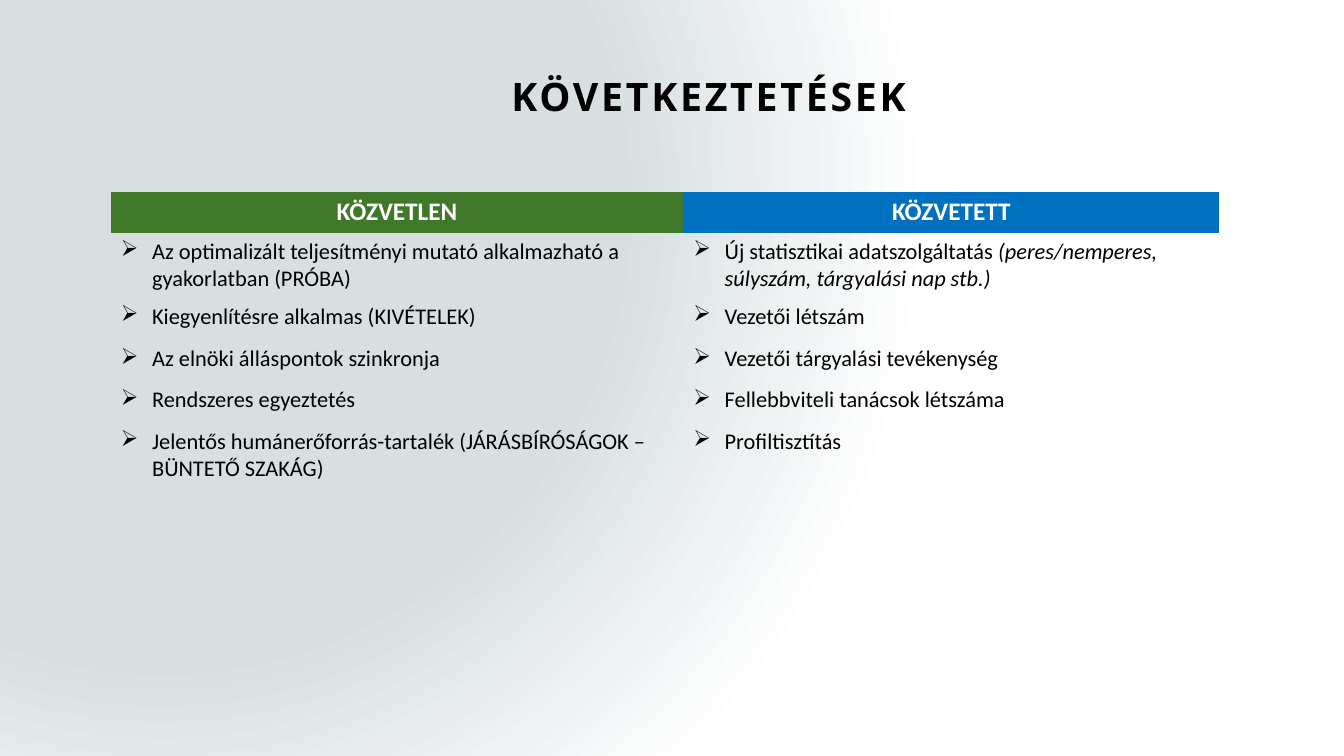
from dataclasses import dataclass

from lxml.etree import SubElement
from pptx import Presentation
from pptx.dml.color import RGBColor as Rgb
from pptx.enum.text import MSO_ANCHOR as Anchor, MSO_AUTO_SIZE as Fit, PP_ALIGN as Align
from pptx.oxml.ns import qn
from pptx.util import Cm, Pt

PLAIN = "{2D5ABB26-0587-4C30-8999-92F81FD0307C}"
INDENT = Cm(0.79)


@dataclass
class Column:
    head: str
    fill: str
    width: float
    items: list[str]
    tail: str = ""  # italic end of the first item


COLUMNS = [
    Column("KÖZVETLEN", "40782A", 14.43, [
        "Az optimalizált teljesítményi mutató alkalmazható a gyakorlatban (PRÓBA)",
        "Kiegyenlítésre alkalmas (KIVÉTELEK)",
        "Az elnöki álláspontok szinkronja",
        "Rendszeres egyeztetés",
        "Jelentős humánerőforrás-tartalék (JÁRÁSBÍRÓSÁGOK – BÜNTETŐ SZAKÁG)",
    ]),
    Column("KÖZVETETT", "0070C0", 13.51, [
        "Új statisztikai adatszolgáltatás ",
        "Vezetői létszám",
        "Vezetői tárgyalási tevékenység",
        "Fellebbviteli tanácsok létszáma",
        "Profiltisztítás",
    ], "(peres/nemperes, súlyszám, tárgyalási nap stb.)"),
]
ROWS = [1.04, 1.04, 1.07, 1.04, 1.04, 1.04]


def paint(part, color: str) -> None:
    part.rgb = Rgb.from_string(color)


def write(para, text: str, *, size: float = 16, font: str = "Calibri",
          color: str = "000000", bold: bool = False, italic: bool = False,
          space: float = 0) -> None:
    run = para.add_run()
    run.text = text
    face = run.font
    face.size, face.name, face.bold, face.italic = Pt(size), font, bold, italic
    paint(face.color, color)
    if space:
        run._r.get_or_add_rPr().set("spc", str(int(space * 100)))


def bullet(para) -> None:
    props = para._p.get_or_add_pPr()
    props.set("marL", str(INDENT))
    props.set("indent", str(-INDENT))
    SubElement(props, qn("a:buChar"), char="➢")


def backdrop(slide) -> None:
    """Fill the background with a circular gradient."""
    fill = slide.background.fill
    fill.gradient()
    for stop, (place, color) in zip(fill.gradient_stops, [(0.59, "D7DFE1"), (1, "FFFFFF")]):
        stop.position = place
        paint(stop.color, color)
    grad = slide.element.find(".//" + qn("a:gradFill"))
    grad.remove(grad.find(qn("a:lin")))
    ring = SubElement(grad, qn("a:path"), path="circle")
    SubElement(ring, qn("a:fillToRect"), l="50000", t="55000", r="125000", b="100000")


def heading(slide) -> None:
    title = slide.shapes.title
    title.left, title.top, title.width, title.height = Cm(6.81), Cm(0.99), Cm(22.1), Cm(3)
    frame = title.text_frame
    frame.auto_size, frame.word_wrap = Fit.NONE, True
    frame.vertical_anchor = Anchor.MIDDLE
    frame.margin_left = frame.margin_right = Cm(0.5)
    frame.margin_top = frame.margin_bottom = Cm(0.5)
    para = frame.paragraphs[0]
    para.alignment, para.line_spacing = Align.CENTER, 0.9
    write(para, "KÖVETKEZTETÉSEK", size=28, font="Open Sans", bold=True, space=2)


def grid(slide) -> None:
    """Draw the two-column table."""
    wide = sum(col.width for col in COLUMNS)
    table = slide.shapes.add_table(len(ROWS), len(COLUMNS), Cm(2.79), Cm(4.83),
                                   Cm(wide), Cm(sum(ROWS))).table
    table._tbl.tblPr.find(qn("a:tableStyleId")).text = PLAIN
    table.horz_banding = False
    for row, high in zip(table.rows, ROWS):
        row.height = Cm(high)
    for x, col in enumerate(COLUMNS):
        table.columns[x].width = Cm(col.width)
        cell = table.cell(0, x)
        cell.fill.solid()
        paint(cell.fill.fore_color, col.fill)
        para = cell.text_frame.paragraphs[0]
        para.alignment = Align.CENTER
        write(para, col.head, size=18, color="FFFFFF", bold=True)
        for y, item in enumerate(col.items, 1):
            cell = table.cell(y, x)
            cell.fill.background()
            para = cell.text_frame.paragraphs[0]
            bullet(para)
            write(para, item)
            if y == 1 and col.tail:
                write(para, col.tail, italic=True)


def main() -> None:
    deck = Presentation()
    deck.slide_width, deck.slide_height = Cm(33.87), Cm(19.05)
    slide = deck.slides.add_slide(deck.slide_layouts.get_by_name("Title Only"))
    backdrop(slide)
    heading(slide)
    grid(slide)
    deck.save("out.pptx")


if __name__ == "__main__":
    main()
